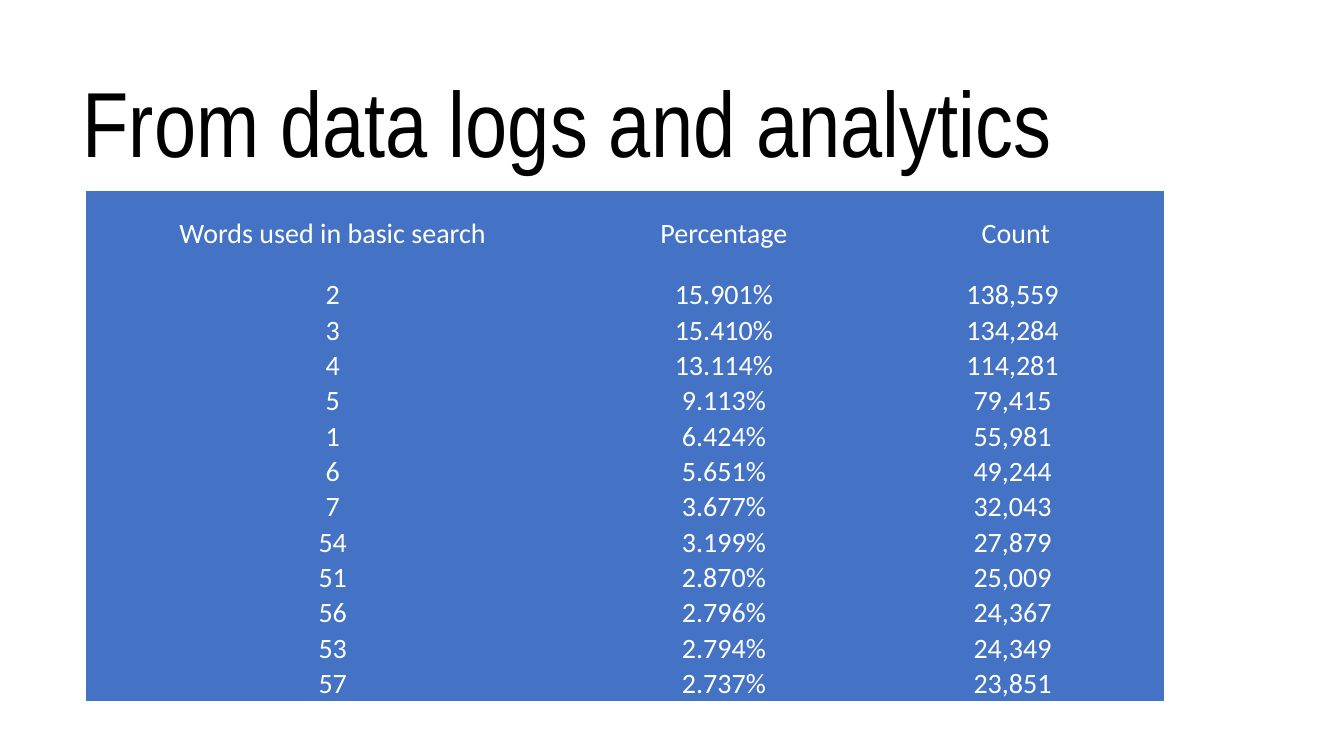
"""Build a slide with a table of search lengths from logs and analytics."""
from dataclasses import dataclass

from pptx import Presentation
from pptx.dml.color import RGBColor
from pptx.enum.text import MSO_ANCHOR as Anchor, MSO_AUTO_SIZE as AutoSize, PP_ALIGN as Align
from pptx.slide import Slide
from pptx.text.text import TextFrame
from pptx.util import Emu, Pt

PX = 9144


@dataclass(frozen=True)
class Theme:
    title_font: str = "Arial Narrow"
    table_font: str = "Calibri"
    title_size: int = 66
    table_size: int = 20
    ink: str = "000000"
    light: str = "FFFFFF"
    panel: str = "4472C4"


@dataclass(frozen=True)
class SearchLength:
    words: int
    percentage: float
    count: int

    def texts(self) -> tuple[str, str, str]:
        return str(self.words), f"{self.percentage:.3f}%", f"{self.count:,} "


THEME = Theme()
HEADINGS = ("Words used in basic search", "Percentage", "Count")
COLUMN_WIDTHS = (490, 286, 293)
HEADER_HEIGHT, ROW_HEIGHT = 86, 31
SEARCHES = (
    SearchLength(2, 15.901, 138559),
    SearchLength(3, 15.410, 134284),
    SearchLength(4, 13.114, 114281),
    SearchLength(5, 9.113, 79415),
    SearchLength(1, 6.424, 55981),
    SearchLength(6, 5.651, 49244),
    SearchLength(7, 3.677, 32043),
    SearchLength(54, 3.199, 27879),
    SearchLength(51, 2.870, 25009),
    SearchLength(56, 2.796, 24367),
    SearchLength(53, 2.794, 24349),
    SearchLength(57, 2.737, 23851),
)


def px(length: int) -> Emu:
    return Emu(length * PX)


def write(frame: TextFrame, text: str, *, font: str, size: int, color: str,
          align: Align = Align.LEFT, line: float = 1.0, before: int = 0) -> None:
    para = frame.paragraphs[0]
    para.alignment = align
    para.line_spacing = line
    para.space_before = Pt(before)
    span = para.add_run()
    span.text = text
    span.font.name = font
    span.font.size = Pt(size)
    span.font.color.rgb = RGBColor.from_string(color)


def add_title(page: Slide, text: str) -> None:
    box = page.shapes.title
    box.left, box.top, box.width, box.height = map(px, (72, 60, 1190, 119))
    frame = box.text_frame
    frame.word_wrap = True
    frame.auto_size = AutoSize.NONE
    frame.vertical_anchor = Anchor.TOP
    frame.margin_top = px(17)
    write(frame, text, font=THEME.title_font, size=THEME.title_size,
          color=THEME.ink, line=0.9, before=10)


def add_search_table(page: Slide, left: int, top: int) -> None:
    rows = [HEADINGS, *(search.texts() for search in SEARCHES)]
    heights = [HEADER_HEIGHT] + [ROW_HEIGHT] * len(SEARCHES)
    table = page.shapes.add_table(len(rows), len(HEADINGS), px(left), px(top),
                                  px(sum(COLUMN_WIDTHS)), px(sum(heights))).table
    table.horz_banding = False
    table.first_row = False
    for column, width in zip(table.columns, COLUMN_WIDTHS):
        column.width = px(width)
    for row, height, texts in zip(table.rows, heights, rows):
        row.height = px(height)
        for cell, text in zip(row.cells, texts):
            cell.fill.solid()
            cell.fill.fore_color.rgb = RGBColor.from_string(THEME.panel)
            cell.margin_left = cell.margin_right = cell.margin_top = px(1)
            cell.margin_bottom = px(0)
            cell.vertical_anchor = Anchor.MIDDLE
            write(cell.text_frame, text, font=THEME.table_font,
                  size=THEME.table_size, color=THEME.light, align=Align.CENTER)
    borderless = "{2D5ABB26-0587-4C30-8999-92F81FD0307C}"
    table._tbl.tblPr.find("{*}tableStyleId").text = borderless


def main() -> None:
    deck = Presentation()
    deck.slide_width, deck.slide_height = px(1333), px(750)
    page = deck.slides.add_slide(deck.slide_layouts[5])
    add_title(page, "From data logs and analytics")
    add_search_table(page, 85, 189)
    deck.save("out.pptx")


if __name__ == "__main__":
    main()
